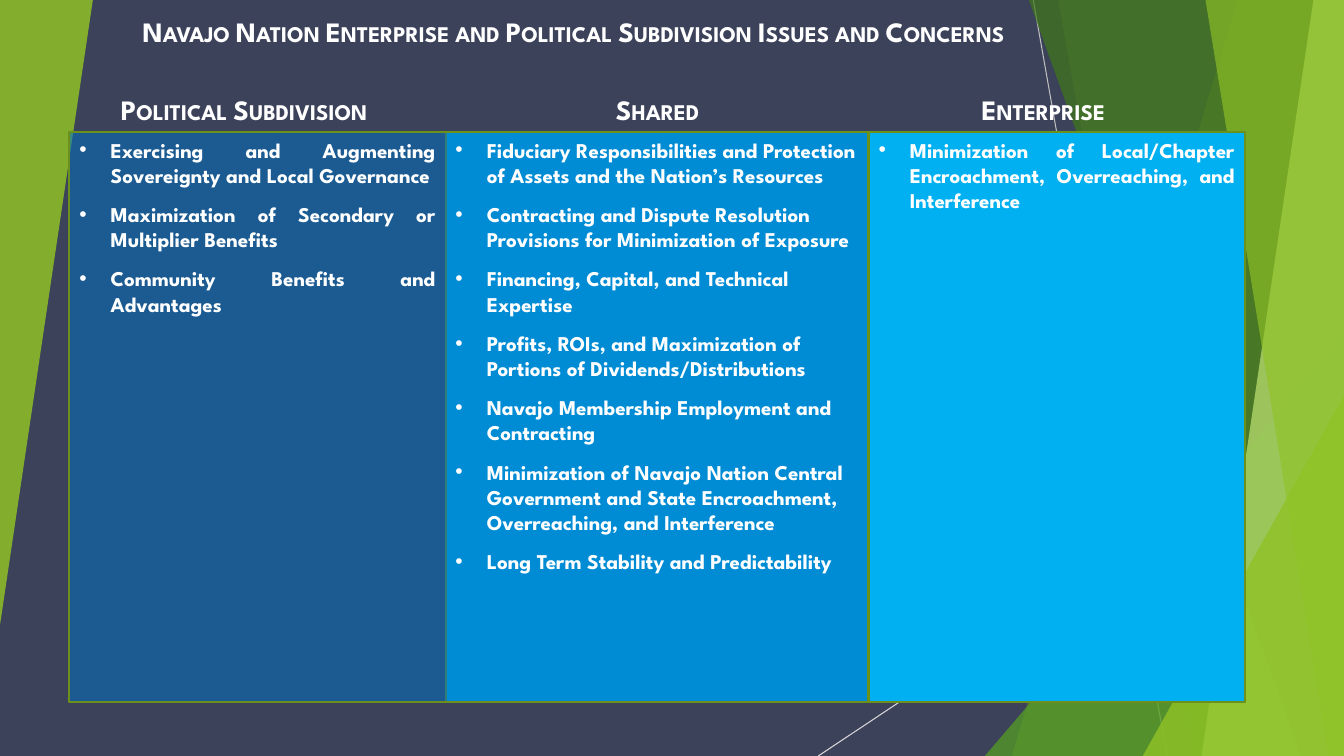
from lxml.etree import SubElement
from pptx import Presentation
from pptx.dml.color import RGBColor
from pptx.enum.shapes import MSO_CONNECTOR, MSO_SHAPE
from pptx.enum.text import MSO_ANCHOR, MSO_AUTO_SIZE, PP_ALIGN
from pptx.oxml.ns import qn
from pptx.util import Cm, Pt

COLORS = {
    "background": "3C425A", "text": "FFFFFF", "border": "6B901C",
    "lime": "90C226", "green": "54A021", "forest": "3F7819", "pale": "C0E474",
    "sky": "00B0F0", "blue": "0070C0", "gray": "BFBFBF", "silver": "D9D9D9",
}
FONT = "League Spartan"
WIDTH, HEIGHT = 33.87, 19.05

# Lines as start and end points, in cm
LINES = [
    ((26.04, 0), (29.41, HEIGHT), "gray"),
    ((WIDTH, 10.24), (20.62, HEIGHT), "silver"),
]
# Slanted facets reach the right edge: (top left x, bottom left x)
# Triangles: (left, top, width, height, rotation)
FACETS = [
    ((31.19, 25.5), "lime", 30),
    ((26.67, 30.05), "lime", 20),
    ((24.82, 8.46, 9.05, 10.59, 0), "green", 72),
    ((25.93, 32.79), "forest", 70),
    ((33.1, 30.28), "pale", 70),
    ((30.38, 33.48), "lime", 65),
    ((28.8, 9.98, 5.07, 9.07, 0), "lime", 80),
    ((0, 0, 2.34, 15.75, 180), "lime", 85),
]

# Heading, heading offset, column width, alignment, points
COLUMNS = [
    ("Political Subdivision", 0.86, 9.48, PP_ALIGN.JUSTIFY, [
        "Exercising and Augmenting Sovereignty and Local Governance",
        "Maximization of Secondary or Multiplier Benefits",
        "Community Benefits and Advantages",
    ]),
    ("Shared", 1.8, 10.66, PP_ALIGN.LEFT, [
        "Fiduciary Responsibilities and Protection of Assets and the Nation’s Resources",
        "Contracting and Dispute Resolution Provisions for Minimization of Exposure",
        "Financing, Capital, and Technical Expertise",
        "Profits, ROIs, and Maximization of Portions of Dividends/Distributions",
        "Navajo Membership Employment and Contracting",
        "Minimization of Navajo Nation Central Government and State Encroachment, "
        "Overreaching, and Interference",
        "Long Term Stability and Predictability",
    ]),
    ("Enterprise", 0.86, 9.48, PP_ALIGN.JUSTIFY, [
        "Minimization of Local/Chapter Encroachment, Overreaching, and Interference",
    ]),
]


def color(name):
    return RGBColor.from_string(COLORS[name])


def paint(shape, name, opacity=100, border=None):
    shape.shadow.inherit = False
    shape.fill.solid()
    shape.fill.fore_color.rgb = color(name)
    if opacity < 100:
        tint = shape.fill._xPr.find(qn("a:solidFill"))[0]
        SubElement(tint, qn("a:alpha")).set("val", str(opacity * 1000))
    if border:
        shape.line.color.rgb = color(border)
        shape.line.width = Pt(1.5)
    else:
        shape.line.fill.background()


def add_span(para, text, size, small_caps=False):
    span = para.add_run()
    span.text = text
    span.font.name = FONT
    span.font.size = Pt(size)
    span.font.bold = True
    span.font.color.rgb = color("text")
    if small_caps:
        span._r.get_or_add_rPr().set("cap", "small")


def write_heading(box, text):
    frame = box.text_frame
    frame.word_wrap = True
    frame.auto_size = MSO_AUTO_SIZE.NONE
    frame.vertical_anchor = MSO_ANCHOR.TOP
    para = frame.paragraphs[0]
    para.alignment = PP_ALIGN.CENTER
    add_span(para, text, 20, small_caps=True)


def add_backdrop(page):
    page.background.fill.solid()
    page.background.fill.fore_color.rgb = color("background")
    for start, end, name in LINES:
        line = page.shapes.add_connector(
            MSO_CONNECTOR.STRAIGHT, *(Cm(value) for value in start + end))
        line.line.color.rgb = color(name)
        line.line.width = Pt(0.75)
        SubElement(line._element.spPr, qn("a:effectLst"))
    for geometry, name, opacity in FACETS:
        if len(geometry) == 2:
            top_x, bottom_x = geometry
            builder = page.shapes.build_freeform(Cm(top_x), 0)
            corners = [(WIDTH, 0), (WIDTH, HEIGHT), (bottom_x, HEIGHT)]
            builder.add_line_segments([(Cm(x), Cm(y)) for x, y in corners])
            facet = builder.convert_to_shape()
        else:
            *box, rotation = geometry
            facet = page.shapes.add_shape(
                MSO_SHAPE.ISOSCELES_TRIANGLE, *(Cm(value) for value in box))
            facet.adjustments[0] = 1
            facet.rotation = rotation
        paint(facet, name, opacity)


def add_title(page, left, top, width, height):
    title = page.shapes.title
    title.left, title.top = Cm(left), Cm(top)
    title.width, title.height = Cm(width), Cm(height)
    write_heading(
        title, "Navajo Nation Enterprise and Political Subdivision Issues and Concerns")


def add_panels(page, left, top, height):
    """Two wide panels overlap to give the shared middle column."""
    first, shared, last = (column[2] for column in COLUMNS)
    panels = [(left + first, shared + last, "sky", 100),
              (left, first + shared, "blue", 55)]
    for x, width, name, opacity in panels:
        panel = page.shapes.add_shape(
            MSO_SHAPE.RECTANGLE, Cm(x), Cm(top), Cm(width), Cm(height))
        paint(panel, name, opacity, "border")


def add_column(page, left, top, height, column):
    heading, offset, width, alignment, points = column
    box = page.shapes.add_textbox(Cm(left + offset), Cm(top - 1.12), Cm(7.09), Cm(1.12))
    write_heading(box, heading)

    # Bulleted points
    box = page.shapes.add_textbox(Cm(left), Cm(top), Cm(width), Cm(height))
    frame = box.text_frame
    frame.word_wrap = True
    for index, point in enumerate(points):
        para = frame.add_paragraph() if index else frame.paragraphs[0]
        para.alignment = alignment
        para.space_after = Pt(10)
        properties = para._p.get_or_add_pPr()
        properties.set("marL", str(Cm(0.79)))
        properties.set("indent", str(-Cm(0.79)))
        SubElement(properties, qn("a:buFont")).set("typeface", "Arial")
        SubElement(properties, qn("a:buChar")).set("char", "•")
        add_span(para, point, 15)


def main():
    deck = Presentation()
    deck.slide_width, deck.slide_height = Cm(WIDTH), Cm(HEIGHT)
    page = deck.slides.add_slide(deck.slide_layouts[5])
    left, top, height = 1.75, 3.33, 14.35
    add_backdrop(page)
    add_title(page, 2.62, 0.25, 23.67, 1.12)
    add_panels(page, left, top, height)
    for column in COLUMNS:
        add_column(page, left, top, height, column)
        left += column[2]
    deck.save("out.pptx")


if __name__ == "__main__":
    main()
